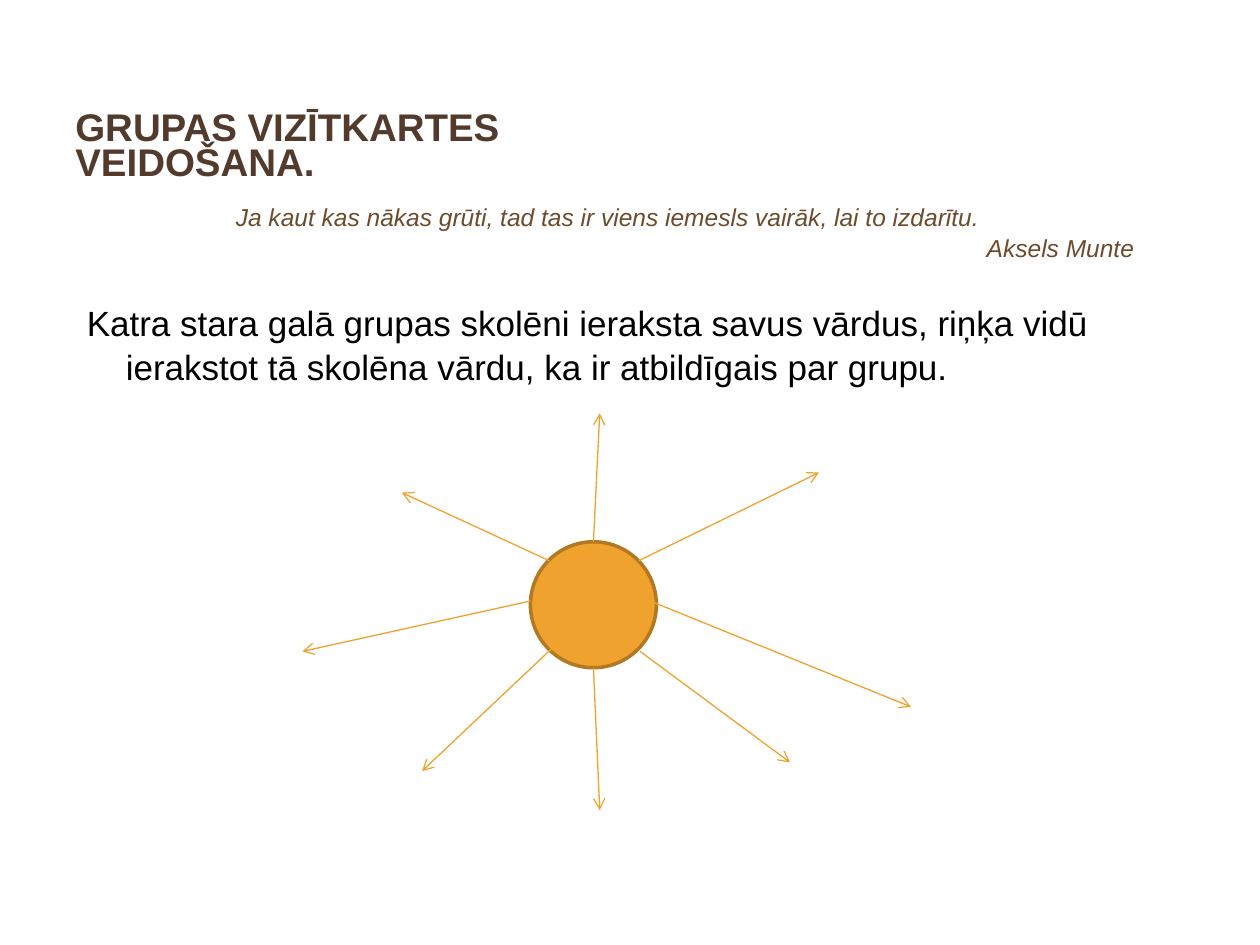
from pptx import Presentation
from pptx.dml.color import RGBColor as Rgb
from pptx.enum.shapes import MSO_CONNECTOR as Link, MSO_SHAPE as Form
from pptx.enum.text import MSO_ANCHOR as Anchor, PP_ALIGN as Align
from pptx.oxml.ns import qn
from pptx.util import Inches, Pt
from lxml.etree import SubElement as Sub

COLORS = {"title": "523A2C", "quote": "6C4C2C", "body": "000000",
          "sun": "F0A22E", "rim": "B27822"}


class Page:
    """Style and current slide, with a method for each kind of element."""

    font = "Arial"

    def __init__(self, deck):
        self.slide = deck.slides.add_slide(deck.slide_layouts[6])
        self.shapes = self.slide.shapes

    def color(self, name):
        return Rgb.from_string(COLORS[name])

    def text(self, box, lines, size, color, space, bold=False, italic=False,
             anchor=Anchor.TOP, margin=0, indent=0, before=0):
        frame = self.shapes.add_textbox(*map(Inches, box)).text_frame
        frame.word_wrap = True
        frame.vertical_anchor = anchor
        frame.text = "\n".join(line for line, _ in lines)
        for para, (_, align) in zip(frame.paragraphs, lines):
            para.alignment = align
            para.line_spacing = space
            para.space_before = Pt(before)
            props = para._p.get_or_add_pPr()
            props.set("marL", str(Inches(margin)))
            props.set("indent", str(Inches(indent)))
            for run in para.runs:
                font = run.font
                font.name, font.size = self.font, Pt(size)
                font.bold, font.italic = bold, italic
                font.color.rgb = self.color(color)

    def disc(self, left, top, size):
        disc = self.shapes.add_shape(
            Form.OVAL, *map(Inches, (left, top, size, size)))
        disc.shadow.inherit = False
        disc.fill.solid()
        disc.fill.fore_color.rgb = self.color("sun")
        disc.line.color.rgb = self.color("rim")
        disc.line.width = Pt(2)

    def ray(self, start, end):
        ray = self.shapes.add_connector(
            Link.STRAIGHT, *map(Inches, (*start, *end)))
        ray.line.color.rgb = self.color("sun")
        ray.line.width = Pt(0.75)
        Sub(ray.line._get_or_add_ln(), qn("a:tailEnd"), type="arrow")
        Sub(ray._element.spPr, qn("a:effectLst"))


def main():
    deck = Presentation()
    deck.slide_width, deck.slide_height = Inches(10), Inches(7.5)
    page = Page(deck)
    page.text((0.5, 0.24, 4.17, 1.27),
              [("GRUPAS VIZĪTKARTES VEIDOŠANA.", Align.LEFT)],
              22, "title", Pt(20), bold=True, anchor=Anchor.BOTTOM)
    page.text((0.5, 1.54, 8.6, 0.76),
              [("Ja kaut kas nākas grūti, tad tas ir viens iemesls vairāk, "
                "lai to izdarītu.", Align.CENTER),
               ("Aksels Munte", Align.RIGHT)],
              14, "quote", 1.05, italic=True, margin=0.05)
    page.text((0.5, 2.33, 8.92, 4.37),
              [("Katra stara galā grupas skolēni ieraksta savus vārdus, "
                "riņķa vidū ierakstot tā skolēna vārdu, ka ir atbildīgais "
                "par grupu.", Align.LEFT)],
              20, "body", 1.05, margin=0.4, indent=-0.31, before=6)
    page.disc(4.21, 4.3, 1)
    rays = [((5.16, 4.77), (7.23, 5.61)), ((4.36, 4.45), (3.19, 3.91)),
            ((4.21, 4.77), (2.4, 5.17)), ((4.44, 5.09), (3.35, 6.12)),
            ((4.71, 5.3), (4.76, 6.43)), ((5.08, 5.17), (6.27, 6.05)),
            ((4.71, 4.3), (4.76, 3.28)), ((5.07, 4.45), (6.5, 3.75))]
    for start, end in rays:
        page.ray(start, end)
    deck.save("out.pptx")


if __name__ == "__main__":
    main()
